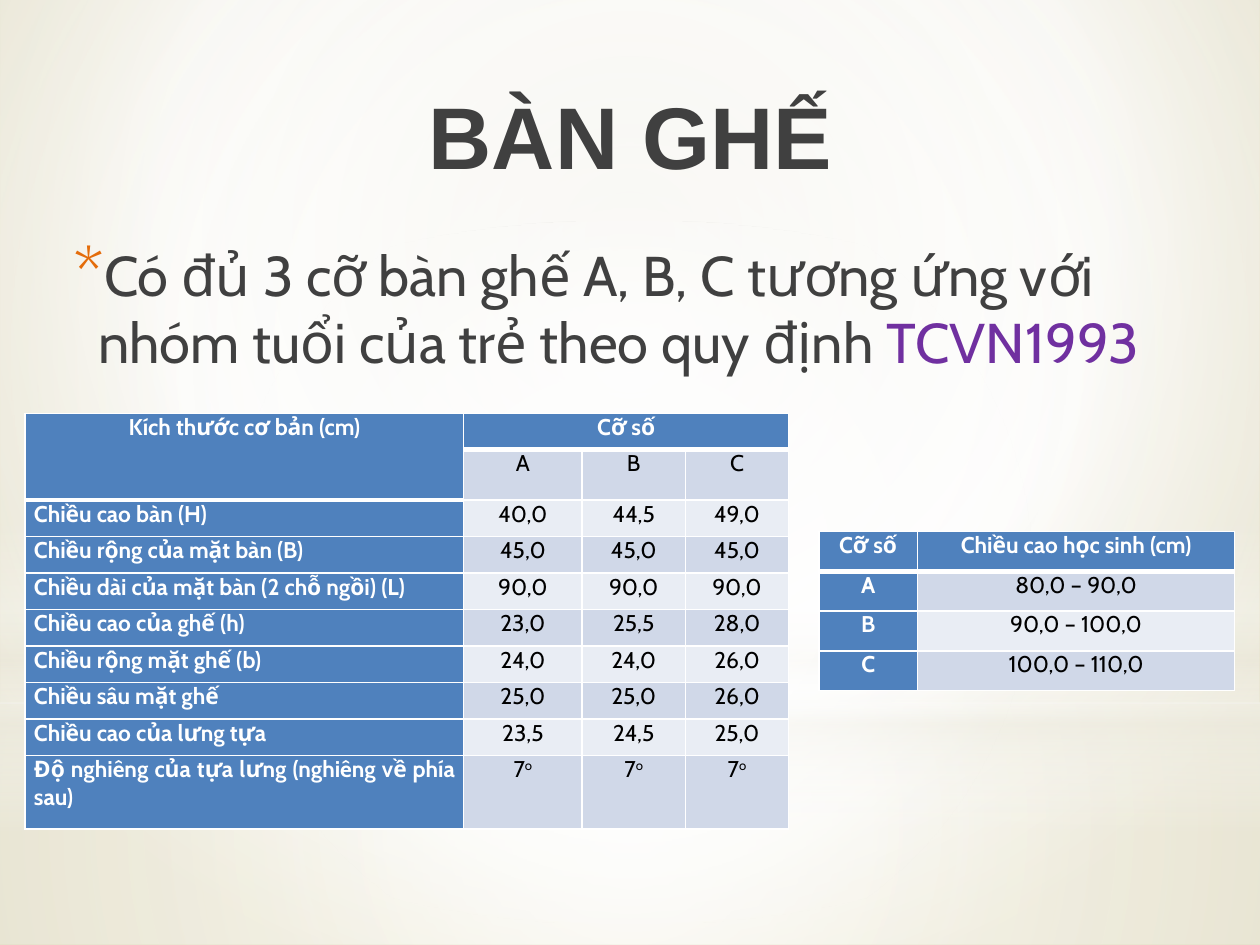
from dataclasses import dataclass

from lxml import etree
from pptx import Presentation
from pptx import util as u
from pptx.dml import color
from pptx.enum import shapes, text
from pptx.oxml import ns

Inches, Pt = u.Inches, u.Pt


@dataclass(frozen=True)
class Theme:
    heading_font: str = "Arial"
    body_font: str = "Cabin"
    ink: str = "404040"
    accent: str = "7030A0"
    bullet: str = "E46C0A"
    header: str = "4F81BD"
    band_dark: str = "D0D8E8"
    band_light: str = "E9EDF4"
    white: str = "FFFFFF"
    black: str = "000000"
    haze: str = "EEECE1"
    edge: str = "D5CC9F"
    center: str = "E7E4D4"
    heading_size: int = 50
    body_size: int = 32
    table_size: int = 13


T = Theme()
MIDDLE = (50, 50, 50, 50)


def apply(target, values):
    for name, value in values.items():
        setattr(target, name, value)


def add_run(paragraph, words, font, size, rgb, bold=False):
    run = paragraph.add_run()
    run.text = words
    apply(run.font, {"name": font, "size": Pt(size), "bold": bold})
    run.font.color.rgb = color.RGBColor.from_string(rgb)
    return run


def sub(parent, tag, **attributes):
    values = {key: str(value) for key, value in attributes.items()}
    return etree.SubElement(parent, ns.qn(tag), values)


def set_gradient(holder, stops, focus=None):
    """Swap the empty fill of holder for a circular or a vertical gradient."""
    gradient = etree.Element(ns.qn("a:gradFill"), rotWithShape="1")
    stop_list = sub(gradient, "a:gsLst")
    for position, rgb, opacity in stops:
        stop = sub(stop_list, "a:gs", pos=position * 1000)
        tint = sub(stop, "a:srgbClr", val=rgb)
        if opacity < 100:
            sub(tint, "a:alpha", val=opacity * 1000)
    if focus:
        circle = sub(gradient, "a:path", path="circle")
        sub(circle, "a:fillToRect",
            **{side: value * 1000 for side, value in zip("ltrb", focus)})
    else:
        sub(gradient, "a:lin", ang=90 * 60000, scaled=0)
    holder.replace(holder.find(ns.qn("a:noFill")), gradient)


def build_backdrop(slide):
    """Beige glow, with four soft veils that belong to the layout."""
    slide.background.fill.background()
    set_gradient(slide.element.xpath("p:cSld/p:bg/p:bgPr")[0],
                 [(0, T.center, 100), (60, T.white, 100), (100, T.edge, 100)],
                 (20, 10, 20, 60))
    rect, oval = shapes.MSO_SHAPE.RECTANGLE, shapes.MSO_SHAPE.OVAL
    veils = [
        (rect, 5.58, 1.92, MIDDLE,
         [(0, T.white, 91), (37, T.white, 76), (100, T.haze, 79)]),
        (rect, 0, 5.58, MIDDLE,
         [(0, T.white, 89), (48, T.white, 62), (100, T.haze, 79)]),
        (rect, 4.12, 2.5, None,
         [(0, T.white, 0), (29, T.white, 30), (45, T.haze, 40),
          (55, T.white, 26), (65, T.haze, 60), (100, T.white, 0)]),
        (oval, 1.75, 5.58, MIDDLE, [(0, T.white, 100), (56, T.white, 0)]),
    ]
    layout_tree = slide.slide_layout.shapes.element
    for index, (kind, top, height, focus, stops) in enumerate(veils):
        veil = slide.shapes.add_shape(
            kind, 0, Inches(top), Inches(10), Inches(height))
        veil.shadow.inherit = False
        veil.line.fill.background()
        veil.fill.background()
        set_gradient(veil.element.spPr, stops, focus)
        layout_tree.insert(2 + index, veil.element)


def place(placeholder, box):
    names = ("left", "top", "width", "height")
    apply(placeholder, {n: Inches(v) for n, v in zip(names, box)})
    frame = placeholder.text_frame
    apply(frame, {"word_wrap": True, "auto_size": text.MSO_AUTO_SIZE.NONE,
                  "vertical_anchor": text.MSO_ANCHOR.TOP})
    return frame.paragraphs[0]


def build_heading(slide, box):
    heading = place(slide.shapes.title, box)
    apply(heading, {"alignment": text.PP_ALIGN.CENTER,
                    "space_before": Pt(5), "space_after": Pt(3)})
    add_run(heading, "BÀN GHẾ", T.heading_font, T.heading_size, T.ink, True)


def build_rule(slide, box):
    rule = place(slide.placeholders[1], box)
    rule.space_after = Pt(3)
    # Starred hanging bullet
    properties = rule._p.get_or_add_pPr()
    properties.set("marL", str(Inches(0.25)))
    properties.set("indent", str(Inches(-0.2)))
    sub(sub(properties, "a:buClr"), "a:srgbClr", val=T.bullet)
    sub(properties, "a:buSzPct", val=130000)
    sub(properties, "a:buFont", typeface=T.body_font)
    sub(properties, "a:buChar", char="*")
    for words, rgb in (
            ("Có đủ 3 cỡ bàn ghế A, B, C tương ứng với nhóm tuổi của trẻ "
             "theo quy định ", T.ink),
            ("TCVN1993", T.accent)):
        add_run(rule, words, T.body_font, T.body_size, rgb)


def set_borders(cell, widths):
    properties = cell._tc.get_or_add_tcPr()
    for index, (side, width) in enumerate(widths.items()):
        line = etree.Element(ns.qn(f"a:ln{side}"), w=str(Pt(width)))
        sub(sub(line, "a:solidFill"), "a:srgbClr", val=T.white)
        properties.insert(index, line)


def build_table(slide, box, widths, heights, rows, label_align, corner=(1, 1)):
    """Banded table; the corner heading covers corner = (rows, columns)."""
    table = slide.shapes.add_table(
        len(rows), len(widths), *map(Inches, box)).table
    for column, width in zip(table.columns, widths):
        column.width = Inches(width)
    for row, height in zip(table.rows, heights):
        row.height = Inches(height)
    for r, row in enumerate(rows):
        for c, words in enumerate(row):
            cell = table.cell(r, c)
            is_heading = r == 0 or (c == 0 and r < corner[0])
            is_strong = r == 0 or c == 0
            apply(cell, {"margin_left": Inches(0.07),
                         "margin_right": Inches(0.07),
                         "margin_top": 0, "margin_bottom": 0})
            band = T.band_dark if r % 2 else T.band_light
            cell.fill.solid()
            cell.fill.fore_color.rgb = color.RGBColor.from_string(
                T.header if is_strong else band)
            borders = {"L": 1, "R": 1}
            if r == 0:
                borders["T"] = 1
            borders["B"] = 3 if is_heading else 1
            set_borders(cell, borders)
            paragraph = cell.text_frame.paragraphs[0]
            is_label = c == 0 and not is_heading
            apply(paragraph, {
                "alignment": label_align if is_label else text.PP_ALIGN.CENTER,
                "space_before": Pt(3), "space_after": Pt(3)})
            # A caret marks the raised part
            base, _, raised = words.partition("^")
            look = (T.body_font, T.table_size,
                    T.white if is_strong else T.black, is_strong)
            if base:
                add_run(paragraph, base, *look)
            if raised:
                run = add_run(paragraph, raised, *look)
                run.font._element.set("baseline", "30000")
    return table


def build_furniture_sizes(slide, box):
    rows = [
        ("Kích thước cơ bản (cm)", "Cỡ số", "", ""),
        ("", "A", "B", "C"),
        ("Chiều cao bàn (H)", "40,0", "44,5", "49,0"),
        ("Chiều rộng của mặt bàn (B)", "45,0", "45,0", "45,0"),
        ("Chiều dài của mặt bàn (2 chỗ ngồi) (L)", "90,0", "90,0", "90,0"),
        ("Chiều cao của ghế (h)", "23,0", "25,5", "28,0"),
        ("Chiều rộng mặt ghế (b)", "24,0", "24,0", "26,0"),
        ("Chiều sâu mặt ghế", "25,0", "25,0", "26,0"),
        ("Chiều cao của lưng tựa", "23,5", "24,5", "25,0"),
        ("Độ nghiêng của tựa lưng (nghiêng về phía sau)", "7^o", "7^o", "7^o"),
    ]
    table = build_table(slide, box, (3.48, 0.94, 0.82, 0.82),
                        [0.29, 0.4] + [0.29] * 7 + [0.58], rows,
                        text.PP_ALIGN.JUSTIFY, corner=(2, 1))
    table.cell(0, 0).merge(table.cell(1, 0))
    table.cell(0, 1).merge(table.cell(0, 3))


def build_pupil_heights(slide, box):
    rows = [("Cỡ số", "Chiều cao học sinh (cm)"), ("A", "80,0 – 90,0"),
            ("B", "90,0 – 100,0"), ("C", "100,0 – 110,0")]
    build_table(slide, box, (0.78, 2.52), [box[3] / len(rows)] * len(rows),
                rows, text.PP_ALIGN.CENTER)


def main():
    deck = Presentation()
    apply(deck, {"slide_width": Inches(10), "slide_height": Inches(7.5)})
    slide = deck.slides.add_slide(deck.slide_layouts[1])
    build_backdrop(slide)
    build_rule(slide, (0.43, 1.86, 9.06, 5.2))
    build_heading(slide, (0.28, 0.6, 9.45, 0.87))
    build_furniture_sizes(slide, (0.2, 3.28, 6.06, 3.33))
    build_pupil_heights(slide, (6.5, 4.22, 3.3, 1.26))
    deck.save("out.pptx")


if __name__ == "__main__":
    main()
